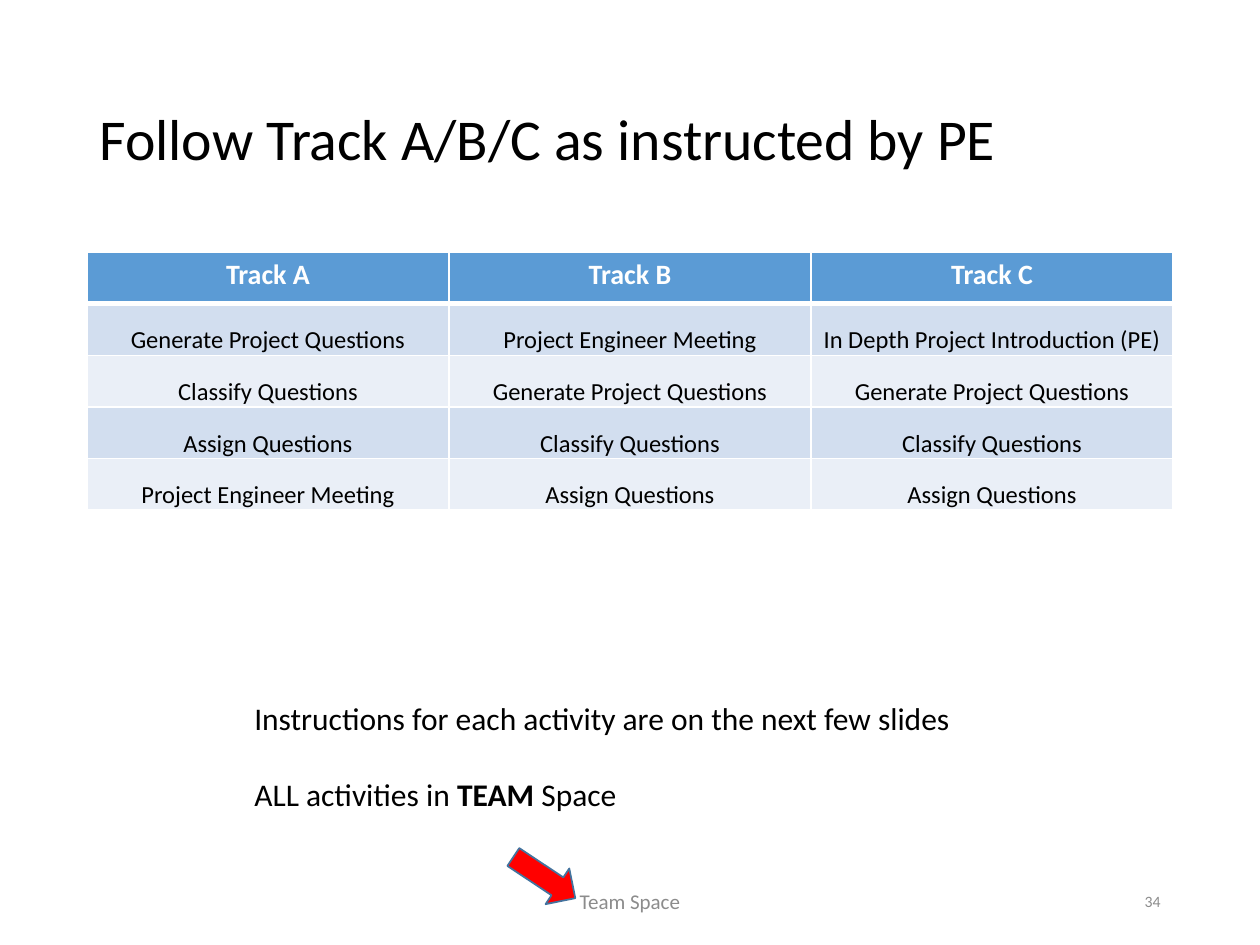
from lxml import etree
from pptx import Presentation
from pptx.dml.color import RGBColor
from pptx.enum.shapes import MSO_SHAPE
from pptx.enum.text import MSO_ANCHOR, PP_ALIGN
from pptx.oxml.ns import qn
from pptx.util import Inches, Pt

LEFT, CENTER, RIGHT = PP_ALIGN.LEFT, PP_ALIGN.CENTER, PP_ALIGN.RIGHT
TOP, MIDDLE, BOTTOM = MSO_ANCHOR.TOP, MSO_ANCHOR.MIDDLE, MSO_ANCHOR.BOTTOM
DOWN_ARROW = MSO_SHAPE.DOWN_ARROW

TRACKS = {
    "Track A": ["Generate Project Questions", "Classify Questions",
                "Assign Questions", "Project Engineer Meeting"],
    "Track B": ["Project Engineer Meeting", "Generate Project Questions",
                "Classify Questions", "Assign Questions"],
    "Track C": ["In Depth Project Introduction (PE)", "Generate Project Questions",
                "Classify Questions", "Assign Questions"],
}
TITLE = [[("Follow Track A/B/C as instructed by PE", False)]]
NOTES = [
    [("Instructions for each activity are on the next few slides", False)],
    [("ALL activities in ", False), ("TEAM", True), (" Space", False)],
]
FOOTER = [[("Team Space", False)]]
NUMBER = [[("34", False)]]

THEME = {
    "font": "Calibri",
    "ink": "000000", "paper": "FFFFFF", "muted": "8C8C8C",
    "header": "5B9BD5", "bands": ("D2DEEF", "EAEFF7"),
    "arrow": "FF0000", "outline": "43739E",
    "title": 33, "head": 16, "cell": 14, "notes": 18, "footer": 12, "number": 9,
}
W, H = 10, 7.5
MARGIN = 0.69
BODY_W = W - 2 * MARGIN
ROW_H = 0.41
FOOT_Y, FOOT_H = 6.95, 0.4

TEXTS = [
    (TITLE, (MARGIN, 0.4, BODY_W, 1.45), "title", "ink", LEFT, MIDDLE,
     {"line_spacing": 0.9}),
    (FOOTER, ((W - 3.38) / 2, FOOT_Y, 3.38, FOOT_H), "footer", "muted",
     CENTER, MIDDLE, {}),
    (NUMBER, (W - MARGIN - 2.25, FOOT_Y, 2.25, FOOT_H), "number", "muted",
     RIGHT, MIDDLE, {}),
    (NOTES, (1.92, 5.5, 5.91, 1.01), "notes", "ink", LEFT, TOP,
     {"space_after": Pt(22)}),
]


def rgb(key):
    return RGBColor.from_string(THEME.get(key, key))


def put(obj, values):
    for name, value in values.items():
        setattr(obj, name, value)


def add_run(p, text, size, color, bold):
    r = p.add_run()
    r.text = text
    put(r.font, {"name": THEME["font"], "size": Pt(THEME[size]), "bold": bold})
    r.font.color.rgb = rgb(color)


def add_text(slide, paras, box, size, color, align, anchor, spacing):
    tf = slide.shapes.add_textbox(*map(Inches, box)).text_frame
    put(tf, {"word_wrap": paras is not NOTES, "vertical_anchor": anchor})
    for i, runs in enumerate(paras):
        p = tf.add_paragraph() if i else tf.paragraphs[0]
        put(p, {"alignment": align, **spacing})
        for text, bold in runs:
            add_run(p, text, size, color, bold)


def set_borders(cell, widths):
    tcPr = cell._tc.get_or_add_tcPr()
    for i, (side, width) in enumerate(widths.items()):
        ln = etree.Element(qn("a:ln" + side), w=str(Pt(width)))
        fill = etree.SubElement(ln, qn("a:solidFill"))
        etree.SubElement(fill, qn("a:srgbClr"), val=THEME["paper"])
        tcPr.insert(i, ln)


def add_tracks(slide):
    rows = [list(TRACKS), *zip(*TRACKS.values())]
    box = (MARGIN, 2, BODY_W, ROW_H * len(rows))
    table = slide.shapes.add_table(len(rows), len(TRACKS), *map(Inches, box)).table
    for row in table.rows:
        row.height = Inches(ROW_H)
    for y, texts in enumerate(rows):
        head = y == 0
        for x, text in enumerate(texts):
            cell = table.cell(y, x)
            cell.fill.solid()
            cell.fill.fore_color.rgb = rgb("header" if head else THEME["bands"][(y - 1) % 2])
            set_borders(cell, {"L": 1, "R": 1, "T": 3 if y == 1 else 1, "B": 3 if head else 1})
            if not head:
                put(cell, {"vertical_anchor": BOTTOM, "margin_left": Inches(0.01),
                           "margin_right": Inches(0.01), "margin_top": Inches(0.01),
                           "margin_bottom": 0})
            p = cell.text_frame.paragraphs[0]
            p.alignment = CENTER
            add_run(p, text, "head" if head else "cell", "paper" if head else "ink", head)


def add_arrow(slide):
    sp = slide.shapes.add_shape(DOWN_ARROW, *map(Inches, (4.15, 6.67, 0.34, 0.59)))
    sp.rotation = 303.6
    sp.shadow.inherit = False
    sp.fill.solid()
    sp.fill.fore_color.rgb = rgb("arrow")
    sp.line.color.rgb = rgb("outline")
    sp.line.width = Pt(1)


def main():
    prs = Presentation()
    put(prs, {"slide_width": Inches(W), "slide_height": Inches(H)})
    slide = prs.slides.add_slide(prs.slide_layouts[6])
    add_tracks(slide)
    for text in TEXTS:
        add_text(slide, *text)
    add_arrow(slide)
    prs.save("out.pptx")


if __name__ == "__main__":
    main()
